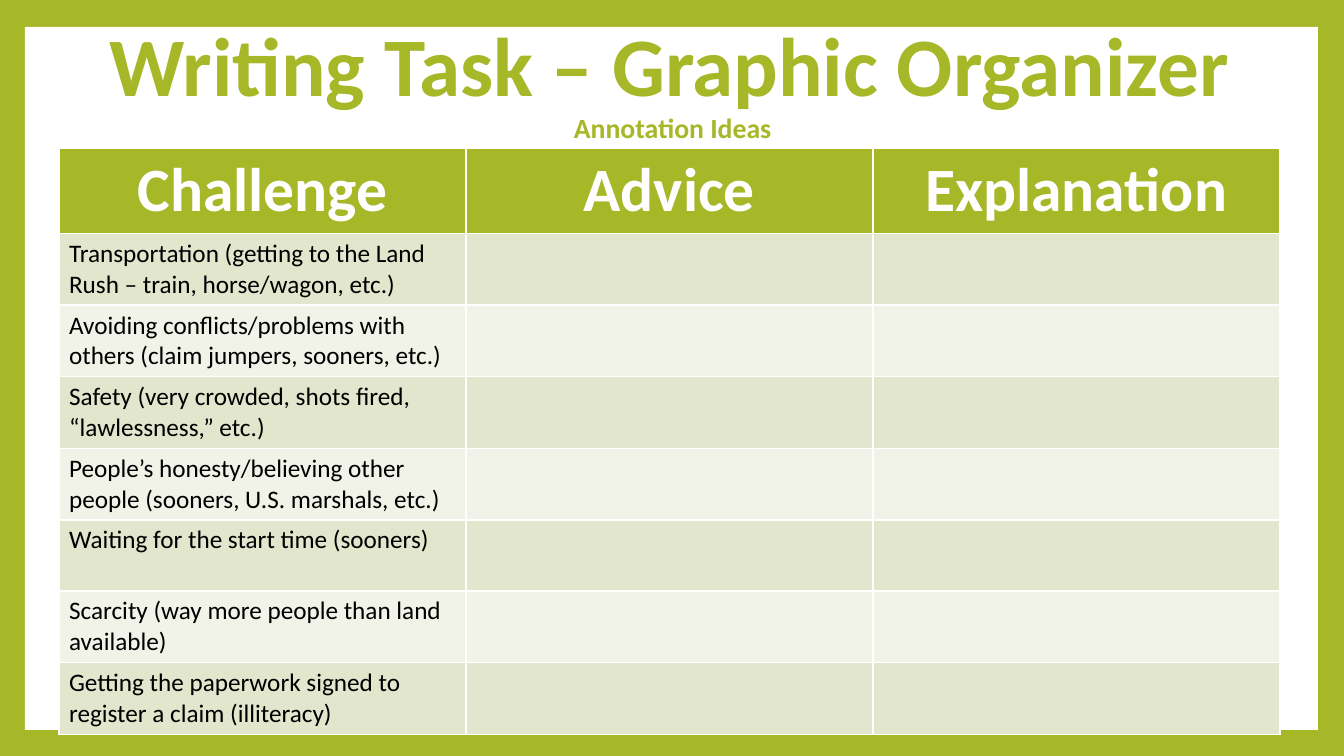
from dataclasses import dataclass

from pptx import Presentation
from pptx.dml.color import RGBColor
from pptx.enum.shapes import MSO_SHAPE
from pptx.enum.text import MSO_ANCHOR, MSO_AUTO_SIZE, PP_ALIGN
from pptx.util import Emu, Pt

RECTANGLE = MSO_SHAPE.RECTANGLE
MIDDLE = MSO_ANCHOR.MIDDLE
NO_AUTOFIT = MSO_AUTO_SIZE.NONE
LEFT, CENTER = PP_ALIGN.LEFT, PP_ALIGN.CENTER

EMU_PER_PX = 914400 / 100.8
FONT = "Calibri"
GREEN, WHITE, BLACK = "A6B727", "FFFFFF", "000000"
BANDS = ("E1E6CD", "F1F3E8")
TITLE_ONLY = 5
COLUMN_WIDTH, HEADER_HEIGHT, ROW_HEIGHT = 407, 85, 71

HEADINGS = ("Challenge", "Advice", "Explanation")
CHALLENGES = (
    "Transportation (getting to the Land Rush – train, horse/wagon, etc.)",
    "Avoiding conflicts/problems with others (claim jumpers, sooners, etc.)",
    "Safety (very crowded, shots fired, “lawlessness,” etc.)",
    "People’s honesty/believing other people (sooners, U.S. marshals, etc.)",
    "Waiting for the start time (sooners)",
    "Scarcity (way more people than land available)",
    "Getting the paperwork signed to register a claim (illiteracy)",
)


@dataclass(frozen=True)
class Box:
    left: int
    top: int
    width: int
    height: int

    def emu(self) -> tuple:
        return tuple(px(side) for side in (self.left, self.top, self.width, self.height))


def px(length: int) -> Emu:
    return Emu(round(length * EMU_PER_PX))


def paint(fill, color: str) -> None:
    fill.solid()
    fill.fore_color.rgb = RGBColor.from_string(color)


def write(para, text: str, *, size: float, color: str, bold: bool = False, align=LEFT) -> None:
    para.alignment = align
    span = para.add_run()
    span.text = text
    span.font.name = FONT
    span.font.size = Pt(size)
    span.font.bold = bold
    span.font.color.rgb = RGBColor.from_string(color)


def add_frame(page, box: Box) -> None:
    frame = page.shapes.add_shape(RECTANGLE, *box.emu())
    frame.shadow.inherit = False
    paint(frame.fill, WHITE)
    frame.line.fill.background()
    page.shapes.title.element.addprevious(frame.element)


def format_title(page, box: Box) -> None:
    title = page.shapes.title
    title.left, title.top, title.width, title.height = box.emu()
    title.text_frame.auto_size = NO_AUTOFIT
    title.text_frame.vertical_anchor = MIDDLE
    title.text_frame.word_wrap = True
    para = title.text_frame.paragraphs[0]
    para.line_spacing = 0.9
    write(para, "Writing Task – Graphic Organizer", size=59.4, color=GREEN, bold=True, align=CENTER)
    para.add_line_break()
    write(para, " Annotation Ideas", size=19.8, color=GREEN, bold=True, align=CENTER)


def add_organizer(page, left: int, top: int) -> None:
    heights = [HEADER_HEIGHT] + [ROW_HEIGHT] * len(CHALLENGES)
    box = Box(left, top, COLUMN_WIDTH * len(HEADINGS), sum(heights))
    table = page.shapes.add_table(len(heights), len(HEADINGS), *box.emu()).table
    for column in table.columns:
        column.width = px(COLUMN_WIDTH)
    for index, height in enumerate(heights):
        table.rows[index].height = px(height)
        for cell in table.rows[index].cells:
            paint(cell.fill, BANDS[(index - 1) % 2] if index else GREEN)
    for index, heading in enumerate(HEADINGS):
        para = table.cell(0, index).text_frame.paragraphs[0]
        write(para, heading, size=44, color=WHITE, bold=True, align=CENTER)
    for index, challenge in enumerate(CHALLENGES, start=1):
        para = table.cell(index, 0).text_frame.paragraphs[0]
        write(para, challenge, size=18, color=BLACK)


def main() -> None:
    deck = Presentation()
    deck.slide_width, deck.slide_height = px(1344), px(756)
    page = deck.slides.add_slide(deck.slide_layouts[TITLE_ONLY])
    paint(page.background.fill, GREEN)
    add_frame(page, Box(25, 27, 1293, 703))
    format_title(page, Box(35, 3, 1269, 164))
    add_organizer(page, 59, 148)
    deck.save("out.pptx")


if __name__ == "__main__":
    main()
